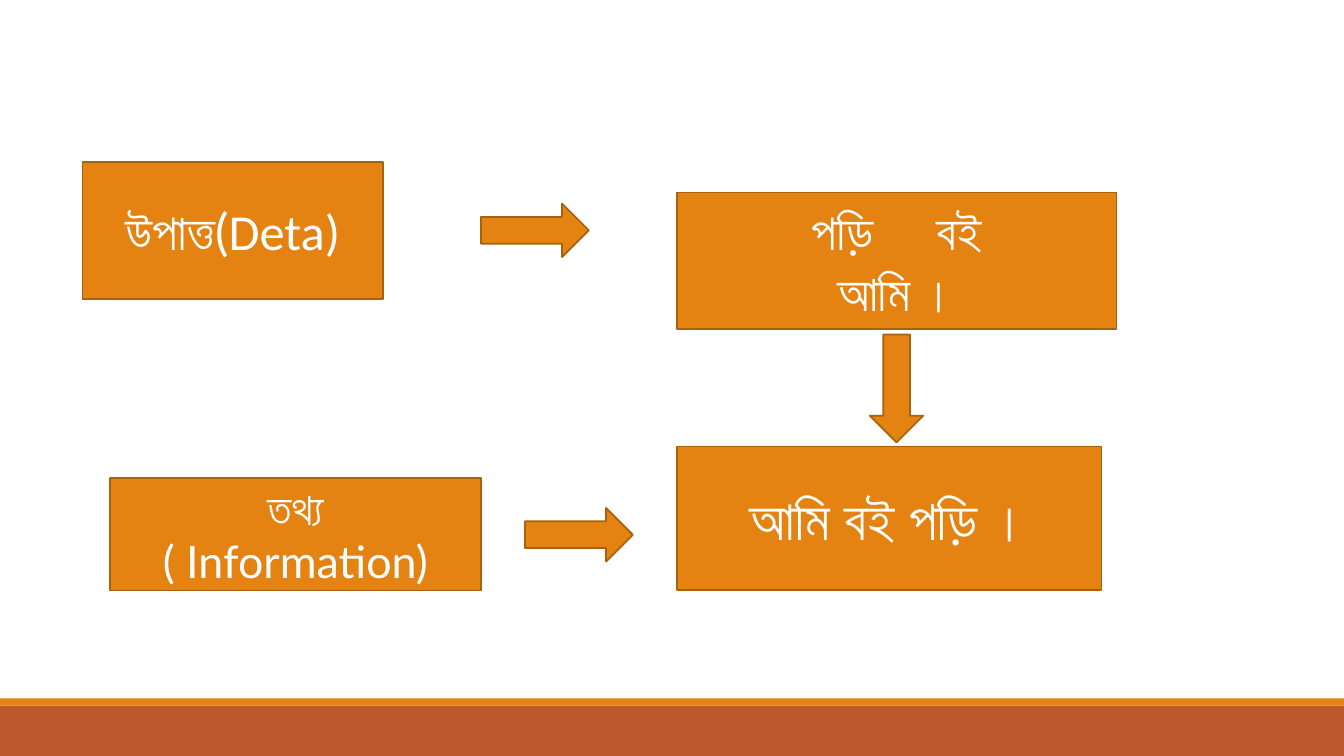
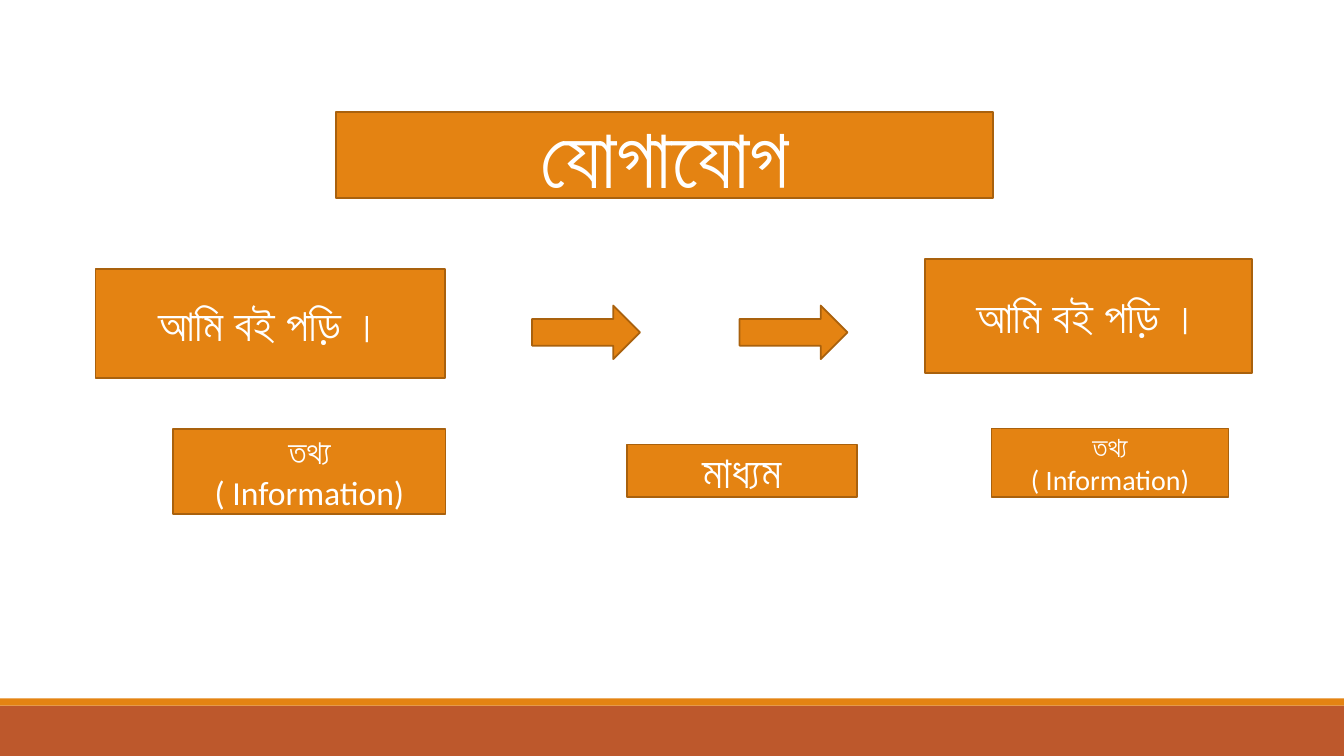
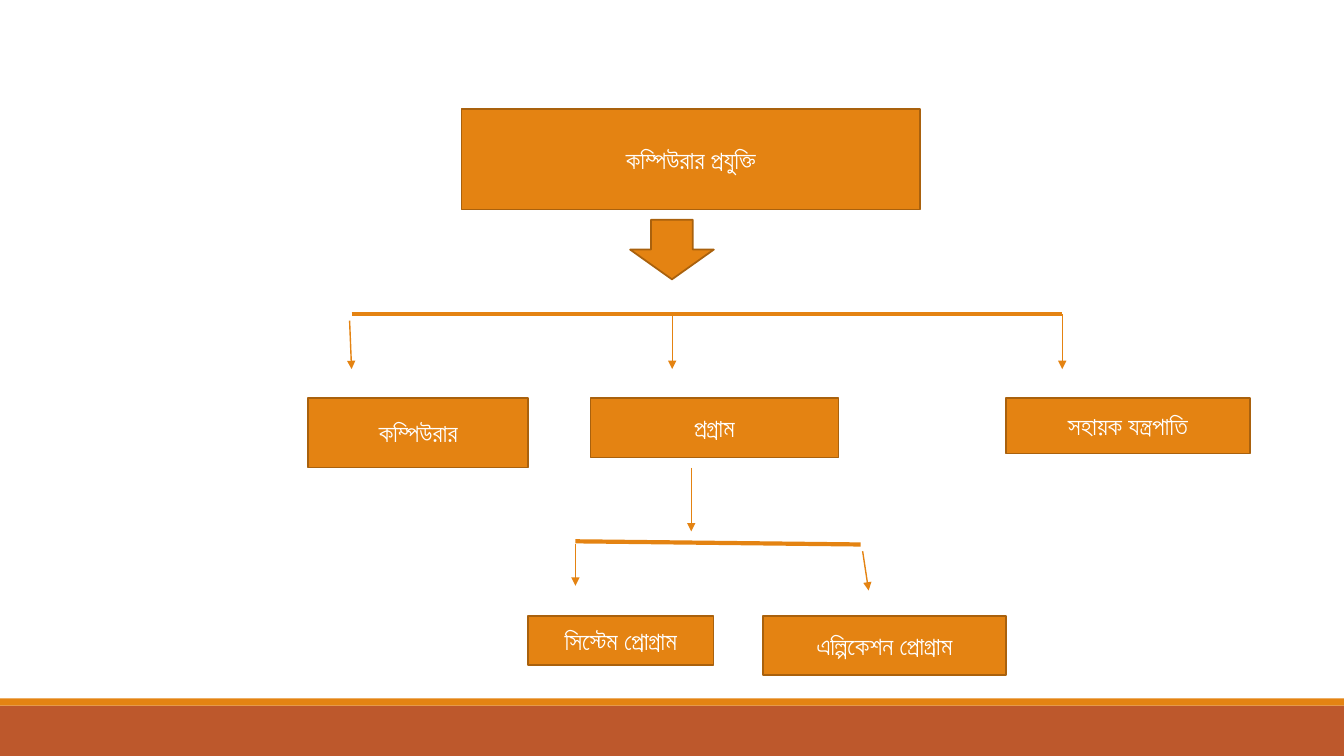
import pptx
import pptx.dml.color
import pptx.enum.shapes
import pptx.enum.text
import pptx.oxml.ns
import pptx.util
import lxml.etree

ORANGE = pptx.dml.color.RGBColor(0xE4, 0x83, 0x12)
BROWN = pptx.dml.color.RGBColor(0xA9, 0x61, 0x0D)
RUST = pptx.dml.color.RGBColor(0xBD, 0x58, 0x2C)
WHITE = pptx.dml.color.RGBColor(0xFF, 0xFF, 0xFF)
KIND = pptx.enum.shapes.MSO_SHAPE
WIDE, HIGH = 33.87, 19.05
LONG, SHORT = 2.72, 1.35


def write(para, text, font="Calibri", size=18, color=WHITE, space=0):
    run = para.add_run()
    run.text = text
    run.font.name = font
    run.font.size = pptx.util.Pt(size)
    run.font.color.rgb = color
    if space:
        run.font._element.set("spc", str(space * 100))


class Deck:
    def __init__(self):
        self.show = pptx.Presentation()
        self.show.slide_width = pptx.util.Cm(WIDE)
        self.show.slide_height = pptx.util.Cm(HIGH)
        self.slide = None

    def page(self):
        self.slide = self.show.slides.add_slide(self.show.slide_layouts[6])
        self.shape(KIND.RECTANGLE, 0, 17.78, WIDE, 1.27, fill=RUST, edge=None)
        self.shape(KIND.RECTANGLE, 0, 17.6, WIDE, 0.18, edge=None)

    def shape(self, kind, left, top, width, height, fill=ORANGE, edge=BROWN):
        item = self.slide.shapes.add_shape(
            kind, *map(pptx.util.Cm, (left, top, width, height)))
        item.shadow.inherit = False
        item.fill.solid()
        item.fill.fore_color.rgb = fill
        if edge is None:
            item.line.fill.background()
        else:
            item.line.color.rgb = edge
            item.line.width = pptx.util.Pt(1.25)
        return item

    def box(self, left, top, width, height, *lines, **style):
        frame = self.shape(KIND.RECTANGLE, left, top, width, height).text_frame
        frame.word_wrap = True
        frame.vertical_anchor = pptx.enum.text.MSO_ANCHOR.MIDDLE
        for i, line in enumerate(lines):
            para = frame.add_paragraph() if i else frame.paragraphs[0]
            para.alignment = pptx.enum.text.PP_ALIGN.CENTER
            parts = [(line, {})] if isinstance(line, str) else line
            for text, extra in parts:
                write(para, text, **{**style, **extra})

    def right(self, left, top):
        self.shape(KIND.RIGHT_ARROW, left, top, LONG, SHORT)

    def down(self, left, top, width=SHORT, height=LONG):
        self.shape(KIND.DOWN_ARROW, left, top, width, height)

    def line(self, *ends, width=1, head=True):
        link = self.slide.shapes.add_connector(
            pptx.enum.shapes.MSO_CONNECTOR.STRAIGHT, *map(pptx.util.Cm, ends))
        link.line.color.rgb = ORANGE
        link.line.width = pptx.util.Pt(width)
        name = pptx.oxml.ns.qn
        if head:
            stroke = link.line._get_or_add_ln()
            lxml.etree.SubElement(stroke, name("a:tailEnd"), type="triangle")
        lxml.etree.SubElement(link._element.spPr, name("a:effectLst"))


def main():
    deck = Deck()
    info = ("তথ্য", "( Information)")
    order = "আমি বই পড়ি ।"

    deck.page()
    deck.box(2.77, 12.04, 9.35, 2.84, *info, size=32, font="Lato")
    deck.box(2.08, 4.09, 7.57, 3.45,
             [("উপাত্ত(", {}), ("Deta)", {"font": "Calibri"})],
             size=36, font="Lato")
    deck.right(12.12, 5.13)
    deck.box(17.07, 4.85, 11.07, 3.45,
             [("পড়ি", {}), (" ", {"space": 36}), ("বই", {})], "আমি ।",
             size=36, font="Lato")
    deck.box(17.07, 11.25, 10.69, 3.61, order, size=40, font="Lato")
    deck.down(21.92, 8.43)
    deck.right(13.23, 12.8)

    deck.page()
    deck.box(2.41, 6.78, 8.81, 2.74, order, size=32)
    for left in (13.41, 18.64):
        deck.right(left, 7.7)
    deck.box(23.32, 6.53, 8.23, 2.87, order, size=32)
    deck.box(4.37, 10.82, 6.86, 2.13, *info, size=24)
    deck.box(24.99, 10.8, 5.97, 1.73, *info, size=20)
    deck.box(15.8, 11.2, 5.79, 1.32, "মাধ্যম", size=32)
    deck.box(8.46, 2.82, 16.56, 2.18, "যোগাযোগ", size=60)

    deck.page()
    deck.box(11.63, 2.74, 11.56, 2.54, "কম্পিউরার প্রযুক্তি")
    deck.down(15.88, 5.54, 2.11, 1.5)
    deck.line(8.86, 7.92, 26.77, 7.92, width=3, head=False)
    deck.line(8.81, 8.08, 8.86, 9.3)
    for left in (16.94, 26.77):
        deck.line(left, 7.92, left, 9.3)
    for left, width, height, text in (
            (7.77, 5.54, 1.75, "কম্পিউরার"),
            (14.88, 6.25, 1.5, "প্রগ্রাম"),
            (25.35, 6.15, 1.4, "সহায়ক যন্ত্রপাতি")):
        deck.box(left, 10.03, width, height, text)
    deck.line(17.42, 11.79, 17.42, 13.39)
    deck.line(14.5, 13.64, 21.69, 13.72, width=3, head=False)
    deck.line(14.5, 13.72, 14.5, 14.76)
    deck.line(21.74, 13.89, 21.89, 14.88)
    deck.box(13.31, 15.52, 4.67, 1.24, "সিস্টেম প্রোগ্রাম")
    deck.box(19.23, 15.52, 6.12, 1.5, "এল্পিকেশন প্রোগ্রাম")

    deck.show.save("out.pptx")


if __name__ == "__main__":
    main()
